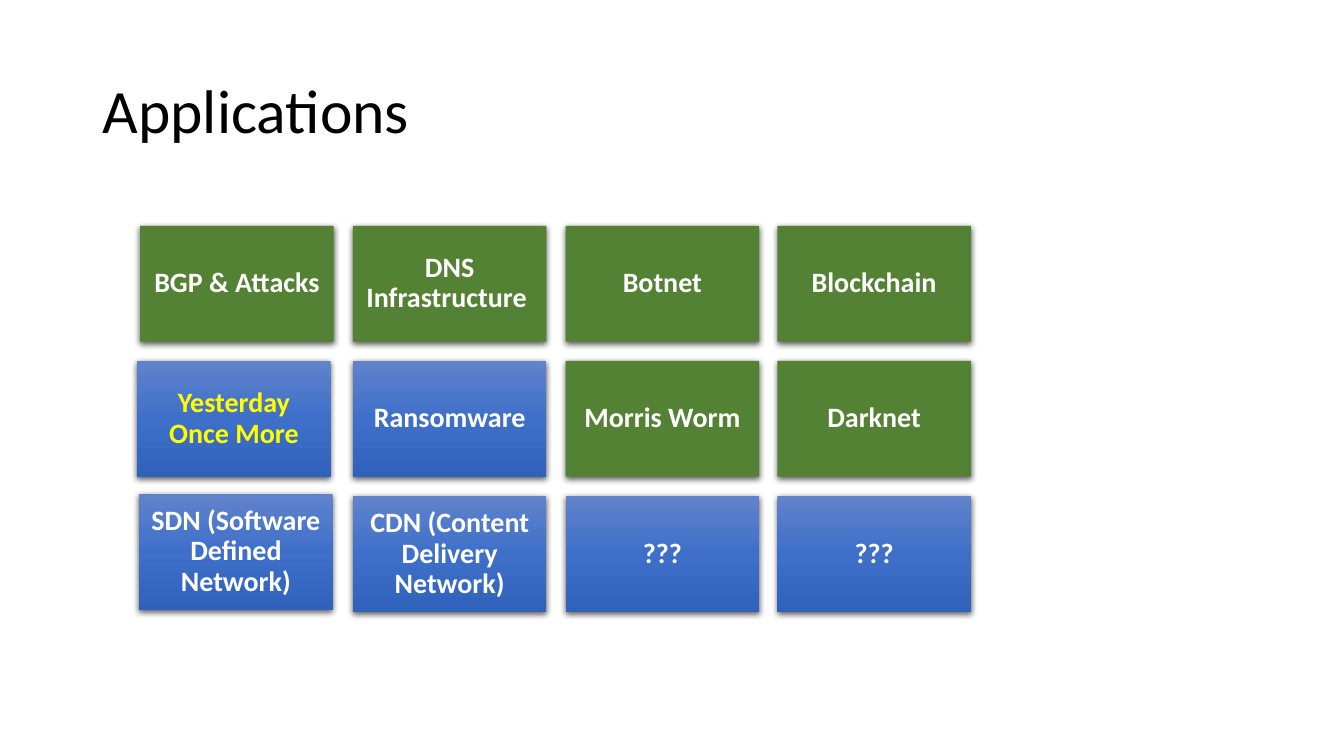
"""Build the Applications slide with its grid of topic cards."""
from pptx import Presentation
from pptx.dml.color import RGBColor
from pptx.enum.shapes import MSO_SHAPE
from pptx.enum.text import MSO_ANCHOR, PP_ALIGN
from pptx.oxml import parse_xml
from pptx.oxml.ns import nsdecls, qn
from pptx.util import Inches, Pt

RECTANGLE = MSO_SHAPE.RECTANGLE
MIDDLE = MSO_ANCHOR.MIDDLE
LEFT, CENTER = PP_ALIGN.LEFT, PP_ALIGN.CENTER
GREEN, WHITE, YELLOW, BLACK = "548235", "FFFFFF", "FFFF00", "000000"
BLUES = ((0, "6183CB"), (50, "3E70CA"), (100, "3062BB"))


def rgb(value):
    return RGBColor.from_string(value)


def write(box, text, size, color, bold, align):
    frame = box.text_frame
    frame.word_wrap = True
    frame.vertical_anchor = MIDDLE
    para = frame.paragraphs[0]
    para.alignment = align
    para.line_spacing = 0.9
    span = para.add_run()
    span.text = text
    span.font.name = "Calibri"
    span.font.size = Pt(size)
    span.font.bold = bold
    span.font.color.rgb = rgb(color)


deck = Presentation()
deck.slide_width, deck.slide_height = Inches(13.33), Inches(7.5)
page = deck.slides.add_slide(deck.slide_layouts[6])

title = page.shapes.add_textbox(Inches(0.92), Inches(0.4), Inches(11.5), Inches(1.45))
write(title, "Applications", 44, BLACK, False, LEFT)

topics = (
    ("BGP & Attacks", "DNS Infrastructure ", "Botnet", "Blockchain"),
    ("Yesterday Once More", "Ransomware", "Morris Worm", "Darknet"),
    ("SDN (Software Defined Network)", "CDN (Content Delivery Network)", "???", "???"),
)
green_topics = {*topics[0], "Morris Worm", "Darknet"}
column_lefts = (1.39, 3.5, 5.61, 7.71)
nudges = {(1, 0): (-0.03, 0), (2, 0): (-0.01, -0.02)}

for row, names in enumerate(topics):
    for column, name in enumerate(names):
        shift_x, shift_y = nudges.get((row, column), (0, 0))
        card = page.shapes.add_shape(
            RECTANGLE,
            Inches(column_lefts[column] + shift_x),
            Inches(2.24 + 1.34 * row + shift_y),
            Inches(1.92),
            Inches(1.15),
        )
        card.line.fill.background()
        if name in green_topics:
            card.fill.solid()
            card.fill.fore_color.rgb = rgb(GREEN)
        else:
            card.fill.gradient()
            card.fill.gradient_angle = 270
            stops = card.element.spPr.find(".//" + qn("a:gsLst"))
            for stop in list(stops):
                stops.remove(stop)
            for percent, color in BLUES:
                stops.append(parse_xml(
                    f'<a:gs {nsdecls("a")} pos="{percent * 1000}">'
                    f'<a:srgbClr val="{color}"/></a:gs>'
                ))

        card.shadow.inherit = False
        card.element.spPr.find(qn("a:effectLst")).append(parse_xml(
            f'<a:outerShdw {nsdecls("a")} blurRad="{Pt(4.5)}" dist="{Pt(1.5)}" '
            f'dir="5400000" algn="ctr" rotWithShape="0"><a:srgbClr val="{BLACK}">'
            '<a:alpha val="63000"/></a:srgbClr></a:outerShdw>'
        ))

        frame = card.text_frame
        frame.margin_left = frame.margin_right = Inches(0.08)
        frame.margin_top = frame.margin_bottom = Inches(0.08)
        color = YELLOW if name == "Yesterday Once More" else WHITE
        write(card, name, 20, color, True, CENTER)

deck.save("out.pptx")
